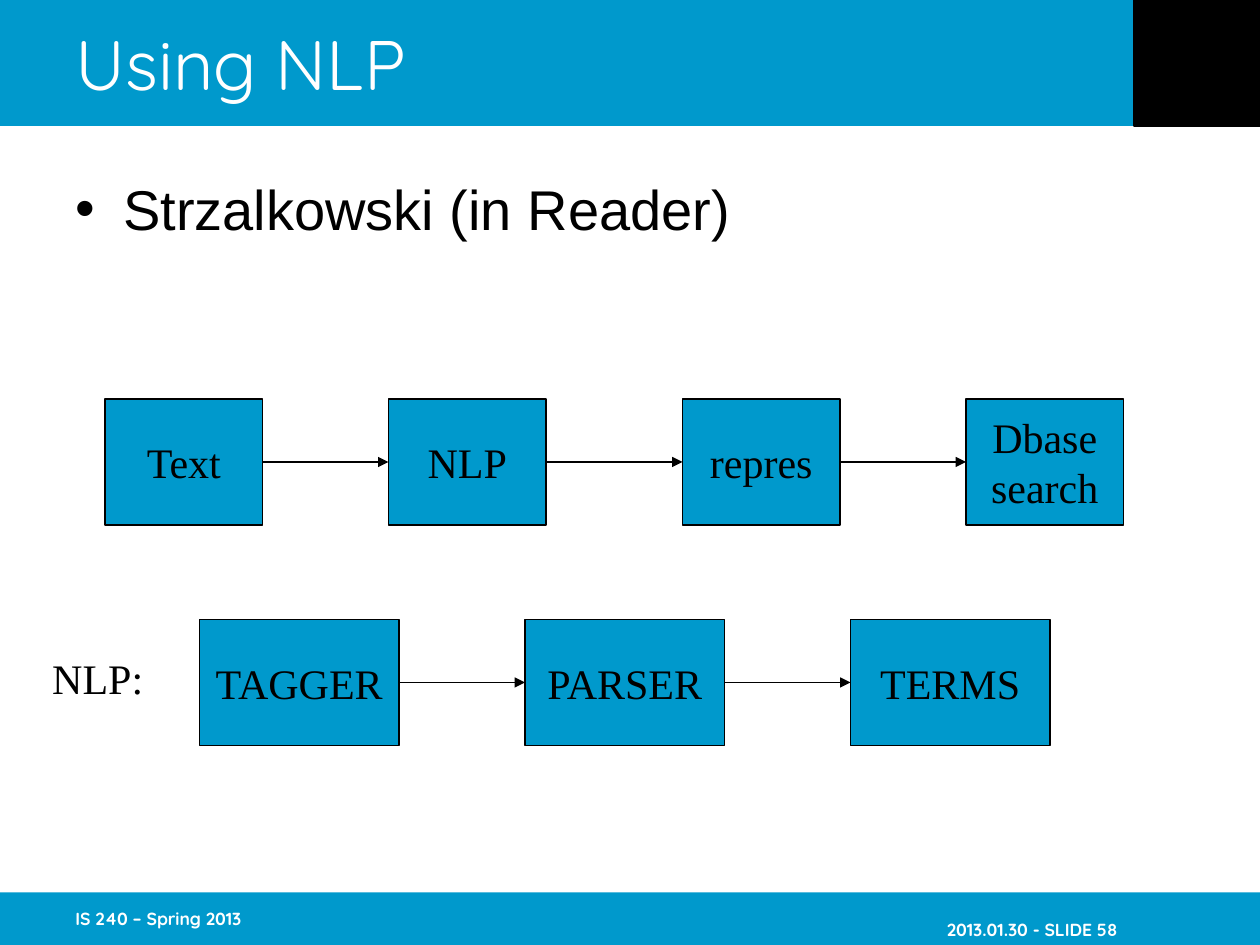
from itertools import pairwise

from lxml.etree import SubElement
from pptx import Presentation
from pptx.dml.color import RGBColor
from pptx.enum.shapes import MSO_CONNECTOR, MSO_SHAPE
from pptx.enum.text import MSO_ANCHOR as Anchor, MSO_AUTO_SIZE as AutoSize, PP_ALIGN as Align
from pptx.oxml.ns import qn
from pptx.util import Inches, Pt

BLUE = RGBColor(0x00, 0x99, 0xCC)
BLACK = RGBColor(0, 0, 0)
WHITE = RGBColor(0xFF, 0xFF, 0xFF)
HEADING_FONT, BODY_FONT, DIAGRAM_FONT = "Quicksand", "Arial", "Times New Roman"

UNIT = Inches(1) / 12  # the slide is a grid of 120 columns by 90 rows
COLUMNS, ROWS = 120, 90
HEADER_ROWS, FOOTER_ROWS = 12, 5
FOOTER_TOP = ROWS - FOOTER_ROWS
BOX_ROWS = 12


def grid(*cells):
    return [round(cell * UNIT) for cell in cells]


def write(paragraph, text, font, size, color, bold=False, align=Align.LEFT):
    paragraph.alignment = align
    run = paragraph.add_run()
    run.text = text
    run.font.name, run.font.size, run.font.bold = font, Pt(size), bold
    run.font.color.rgb = color


def add_rectangle(slide, cells, fill, outline=None):
    rectangle = slide.shapes.add_shape(MSO_SHAPE.RECTANGLE, *grid(*cells))
    rectangle.shadow.inherit = False
    rectangle.fill.solid()
    rectangle.fill.fore_color.rgb = fill
    if outline is None:
        rectangle.line.fill.background()
    else:
        rectangle.line.color.rgb = outline
        rectangle.line.width = Pt(0.75)
    return rectangle


def add_text_frame(slide, cells, anchor=Anchor.TOP):
    frame = slide.shapes.add_textbox(*grid(*cells)).text_frame
    frame.word_wrap = True
    frame.vertical_anchor = anchor
    return frame


def add_footer(slide, left, width, text, align, top_inset=0.05):
    frame = add_text_frame(slide, (left, FOOTER_TOP, width, FOOTER_ROWS), Anchor.MIDDLE)
    frame.margin_top, frame.margin_right = Inches(top_inset), 0
    write(frame.paragraphs[0], text, HEADING_FONT, 10, WHITE, bold=True, align=align)


def add_title(slide, text):
    title = slide.shapes.title
    title.left, title.top, title.width, title.height = grid(6, 0, 102, HEADER_ROWS)
    frame = title.text_frame
    frame.auto_size = AutoSize.NONE
    frame.vertical_anchor = Anchor.MIDDLE
    write(frame.paragraphs[0], text, HEADING_FONT, 40, WHITE)
    # Bring the title in front of the header band
    title._element.getparent().append(title._element)


def add_bullet(slide, text):
    frame = add_text_frame(slide, (6, 16, 108, 65))
    frame.margin_bottom = 0
    paragraph = frame.paragraphs[0]
    properties = paragraph._p.get_or_add_pPr()
    properties.set("marL", str(Inches(0.38)))
    properties.set("indent", str(-Inches(0.38)))
    SubElement(properties, qn("a:buFont"), typeface=BODY_FONT)
    SubElement(properties, qn("a:buChar"), char="•")
    write(paragraph, text, BODY_FONT, 32, BLACK)


def add_step(slide, left, top, width, lines):
    step = add_rectangle(slide, (left, top, width, BOX_ROWS), BLUE, BLACK)
    frame = step.text_frame
    frame.word_wrap = False
    frame.vertical_anchor = Anchor.MIDDLE
    for number, line in enumerate(lines):
        paragraph = frame.add_paragraph() if number else frame.paragraphs[0]
        write(paragraph, line, DIAGRAM_FONT, 24, BLACK, align=Align.CENTER)
    return step


def add_arrow(slide, source, target):
    arrow = slide.shapes.add_connector(MSO_CONNECTOR.STRAIGHT, 0, 0, 0, 0)
    arrow.begin_connect(source, 3)
    arrow.end_connect(target, 1)
    arrow.line.color.rgb = BLACK
    arrow.line.width = Pt(0.75)
    SubElement(arrow.line._get_or_add_ln(), qn("a:tailEnd"), type="triangle")
    SubElement(arrow._element.spPr, qn("a:effectLst"))


def add_flow(slide, top, width, steps):
    """Draw a row of boxes, given as (left, lines), joined by arrows."""
    boxes = [add_step(slide, left, top, width, lines) for left, lines in steps]
    for source, target in pairwise(boxes):
        add_arrow(slide, source, target)


def main():
    deck = Presentation()
    deck.slide_width, deck.slide_height = grid(COLUMNS, ROWS)
    slide = deck.slides.add_slide(deck.slide_layouts[5])

    add_rectangle(slide, (0, 0, COLUMNS, HEADER_ROWS), BLUE)
    add_rectangle(slide, (0, FOOTER_TOP, COLUMNS, FOOTER_ROWS), BLUE)
    add_rectangle(slide, (108, 0, 12, HEADER_ROWS), BLACK, BLACK)
    add_footer(slide, 6, 25, "IS 240 – Spring 2013", Align.LEFT)
    add_footer(slide, 81.4, 25, "2013.01.30 - SLIDE 58", Align.RIGHT, top_inset=0.22)

    add_title(slide, "Using NLP")
    add_bullet(slide, "Strzalkowski (in Reader)")
    add_flow(slide, 38, 15, [(10, ["Text"]), (37, ["NLP"]), (65, ["repres"]),
                             (92, ["Dbase", "search"])])
    add_flow(slide, 59, 19, [(19, ["TAGGER"]), (50, ["PARSER"]), (81, ["TERMS"])])
    label = add_text_frame(slide, (3.8, 61.6, 13, 6))
    write(label.paragraphs[0], "NLP:", DIAGRAM_FONT, 24, BLACK)

    deck.save("out.pptx")


if __name__ == "__main__":
    main()
